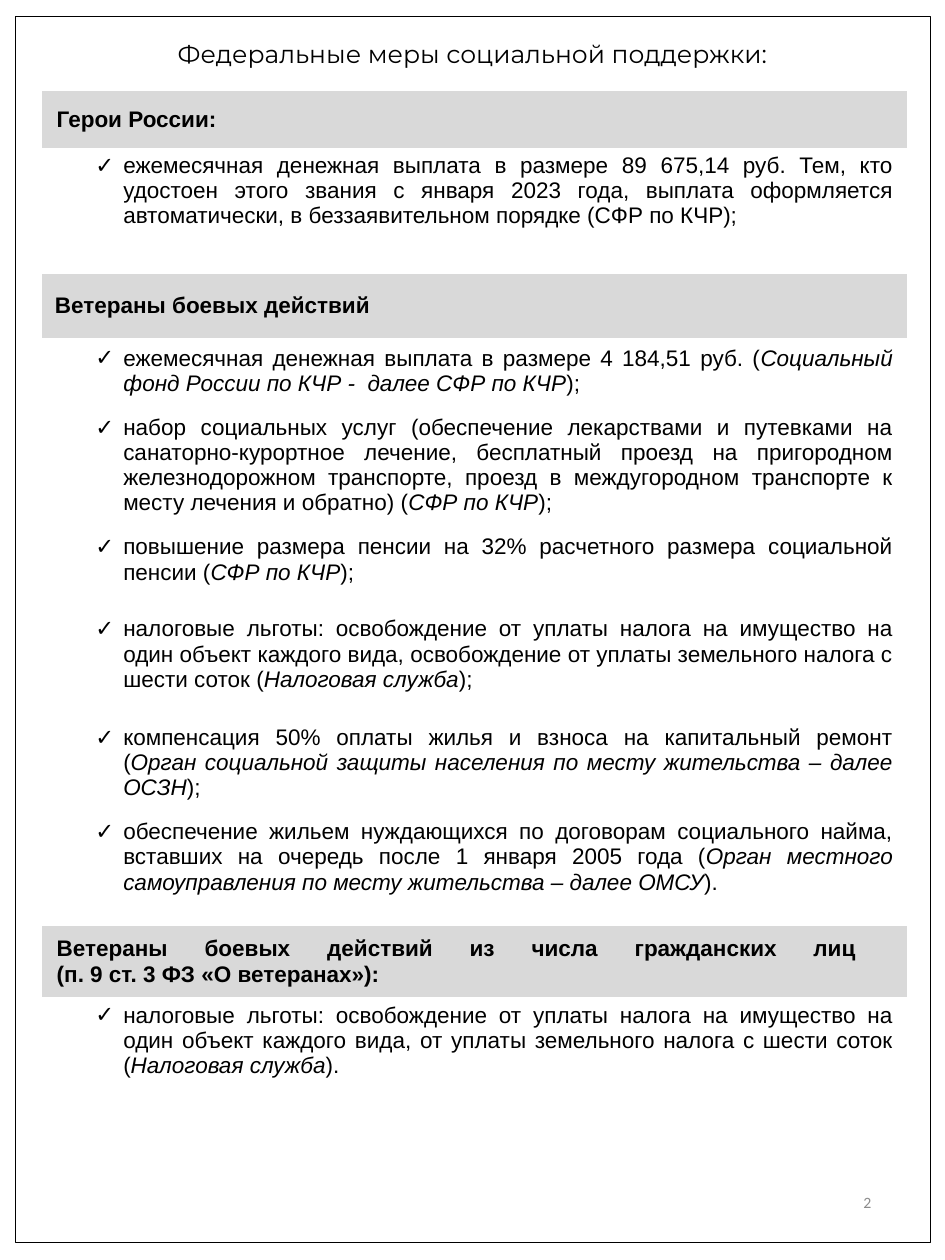
from dataclasses import dataclass

from lxml.etree import SubElement
from pptx import Presentation
from pptx.dml.color import RGBColor
from pptx.enum.shapes import MSO_SHAPE as Shape
from pptx.enum.text import MSO_ANCHOR as Anchor, PP_ALIGN as Align
from pptx.oxml.ns import qn
from pptx.util import Inches, Pt

COLUMNS, ROWS = 105, 140  # square grid over the slide
NO_STYLE_NO_GRID = "{2D5ABB26-0587-4C30-8999-92F81FD0307C}"


@dataclass(frozen=True)
class Theme:
    ink: RGBColor = RGBColor(0, 0, 0)
    band: RGBColor = RGBColor(0xD9, 0xD9, 0xD9)
    muted: RGBColor = RGBColor(0x8C, 0x8C, 0x8C)
    title_font: str = "Montserrat"
    body_font: str = "Arial"
    number_font: str = "Calibri"
    title_size: float = 20
    body_size: float = 18
    number_size: float = 12.6
    bullet: str = "✓"
    hanging: float = 0.31


class Page:
    def __init__(self, presentation, theme):
        self.theme = theme
        self.column = presentation.slide_width / COLUMNS
        self.row = presentation.slide_height / ROWS
        self.slide = presentation.slides.add_slide(presentation.slide_layouts[5])

    def box(self, left, top, width, height):
        return (round(left * self.column), round(top * self.row),
                round(width * self.column), round(height * self.row))

    def run(self, paragraph, text, font, size, color, bold=False, italic=False):
        run = paragraph.add_run()
        run.text = text
        run.font.name, run.font.size = font, Pt(size)
        run.font.bold, run.font.italic = bold, italic
        run.font.color.rgb = color

    def body_run(self, paragraph, text, **style):
        self.run(paragraph, text, self.theme.body_font, self.theme.body_size,
                 self.theme.ink, **style)

    def title(self, text, box):
        shape = self.slide.shapes.title
        shape.left, shape.top, shape.width, shape.height = self.box(*box)
        shape.text_frame.word_wrap = True
        paragraph = shape.text_frame.paragraphs[0]
        paragraph.alignment = Align.CENTER
        self.run(paragraph, text, self.theme.title_font, self.theme.title_size,
                 self.theme.ink)

    def frame(self, box):
        shape = self.slide.shapes.add_shape(Shape.RECTANGLE, *self.box(*box))
        shape.shadow.inherit = False
        shape.fill.background()
        shape.line.color.rgb = self.theme.ink
        shape.line.width = Pt(1)

    def number(self, text, box):
        shape = self.slide.shapes.add_textbox(*self.box(*box))
        shape.text_frame.word_wrap = True
        shape.text_frame.vertical_anchor = Anchor.MIDDLE
        paragraph = shape.text_frame.paragraphs[0]
        paragraph.alignment = Align.RIGHT
        self.run(paragraph, text, self.theme.number_font, self.theme.number_size,
                 self.theme.muted)

    def cell(self, cell, side, end):
        cell.vertical_anchor = Anchor.MIDDLE
        cell.margin_left = cell.margin_right = Inches(side)
        cell.margin_top = cell.margin_bottom = Inches(end)
        paragraph = cell.text_frame.paragraphs[0]
        paragraph.alignment = Align.JUSTIFY
        return paragraph

    def add_bullet(self, paragraph):
        properties = paragraph._p.get_or_add_pPr()
        hanging = Inches(self.theme.hanging)
        properties.set("marL", str(hanging))
        properties.set("indent", str(-hanging))
        SubElement(properties, qn("a:buFont")).set("typeface", self.theme.body_font)
        SubElement(properties, qn("a:buChar")).set("char", self.theme.bullet)

    def section(self, top, heading, items, heights, heading_side=0.16, item_end=0.04):
        """A shaded heading row over bulleted rows; odd runs of an item are italic."""
        left, widths = 4.7, (4.3, 91.8)
        shape = self.slide.shapes.add_table(
            len(heights), len(widths), *self.box(left, top, sum(widths), sum(heights)))
        table = shape.table
        table.horz_banding = table.first_row = False
        table._tbl.tblPr.find(qn("a:tableStyleId")).text = NO_STYLE_NO_GRID
        for column, width in zip(table.columns, widths):
            column.width = round(width * self.column)
        for row, height in zip(table.rows, heights):
            row.height = round(height * self.row)
        for cell in table.iter_cells():
            cell.fill.background()

        # Heading
        header = table.cell(0, 0)
        header.merge(table.cell(0, 1))
        header.fill.solid()
        header.fill.fore_color.rgb = self.theme.band
        paragraph = self.cell(header, heading_side, 0.04)
        for index, line in enumerate(heading):
            if index:
                paragraph.add_line_break()
            self.body_run(paragraph, line, bold=True)

        # Bulleted items
        for index, item in enumerate(items, start=1):
            paragraph = self.cell(table.cell(index, 1), 0.16, item_end)
            self.add_bullet(paragraph)
            for position, text in enumerate(item):
                self.body_run(paragraph, text, italic=position % 2 == 1)


HEROES = [
    ["ежемесячная денежная выплата в размере 89 675,14 руб. Тем, кто удостоен этого "
     "звания с января 2023 года, выплата оформляется автоматически, в беззаявительном "
     "порядке (СФР по КЧР);"],
]
VETERANS = [
    ["ежемесячная денежная выплата в размере 4 184,51 руб. (",
     "Социальный фонд России по КЧР -  далее СФР по КЧР", ");"],
    ["набор социальных услуг (обеспечение лекарствами и путевками на "
     "санаторно-курортное лечение, бесплатный проезд на пригородном железнодорожном "
     "транспорте, проезд в междугородном транспорте к месту лечения и обратно) (",
     "СФР по КЧР", ");"],
    ["повышение размера пенсии на 32% расчетного размера социальной пенсии (",
     "СФР по КЧР", ");"],
    ["налоговые льготы: освобождение от уплаты налога на имущество на один объект "
     "каждого вида, освобождение от уплаты земельного налога с шести соток (",
     "Налоговая служба", ");"],
    ["компенсация 50% оплаты жилья и взноса на капитальный ремонт (",
     "Орган социальной защиты населения по месту жительства – далее ОСЗН", ");"],
    ["обеспечение жильем нуждающихся по договорам социального найма, вставших на "
     "очередь после 1 января 2005 года (",
     "Орган местного самоуправления по месту жительства – далее ОМСУ", ")."],
]
CIVILIANS = [
    ["налоговые льготы: освобождение от уплаты налога на имущество на один объект "
     "каждого вида, от уплаты земельного налога с шести соток (",
     "Налоговая служба", ")."],
]


def main():
    presentation = Presentation()
    presentation.slide_width, presentation.slide_height = Inches(10.5), Inches(14)
    page = Page(presentation, Theme())

    page.title("Федеральные меры социальной поддержки:", (0, 3.8, COLUMNS, 4.4))
    page.section(30.4, ["Ветераны боевых действий"], VETERANS,
                 [7.1, 7.4, 13.6, 7.4, 13.6, 10.5, 10.5],
                 heading_side=0.14, item_end=0.08)
    page.frame((1.7, 1.8, 101.7, 136.3))
    page.section(10.1, ["Герои России:"], HEROES, [6.3, 9.6])
    page.section(102.9, ["Ветераны боевых действий из числа гражданских лиц ",
                         "(п. 9 ст. 3 ФЗ «О ветеранах»):"], CIVILIANS, [7.9, 9.6])
    page.number("2", (74.2, 129.8, 23.6, 7.5))

    presentation.save("out.pptx")


if __name__ == "__main__":
    main()
